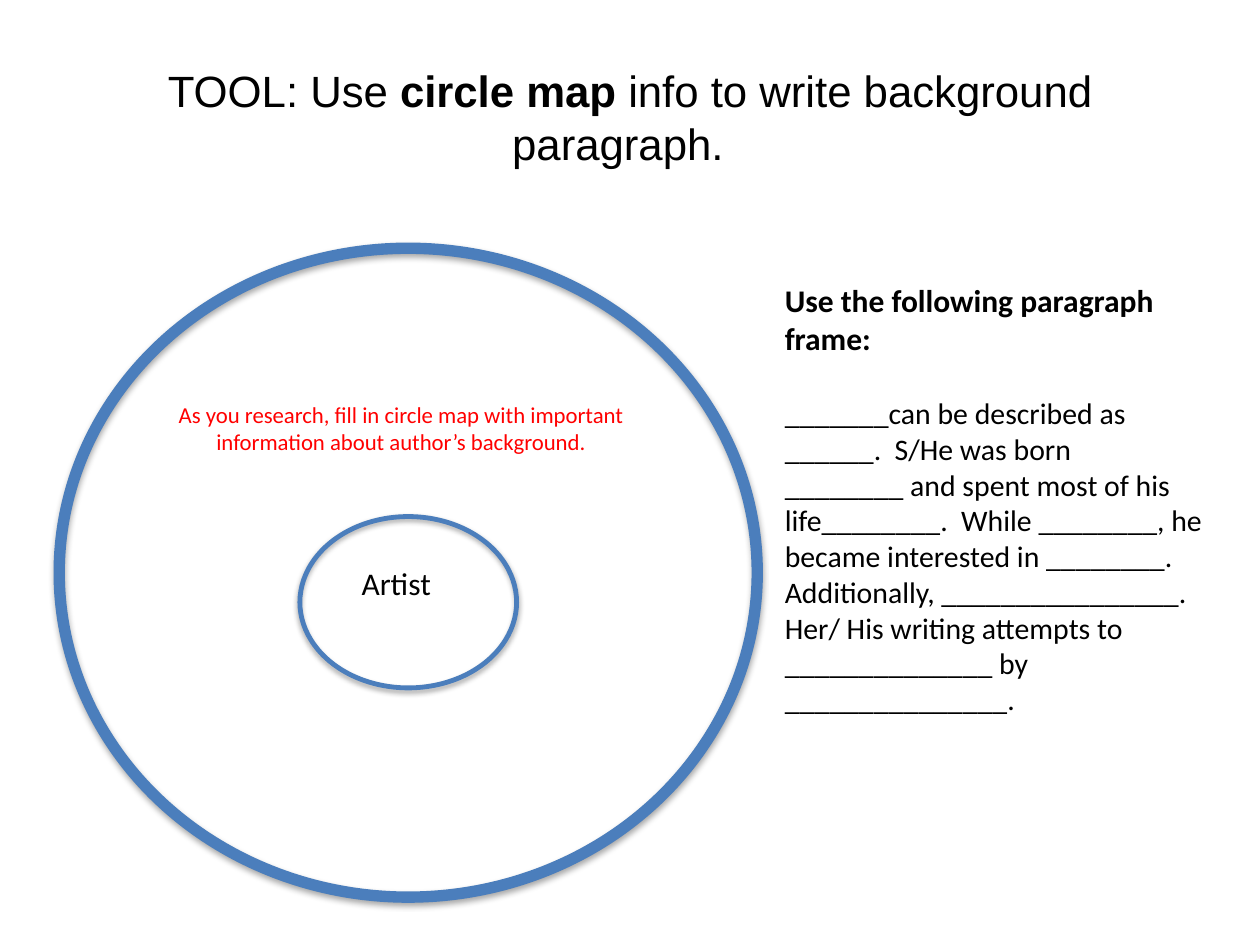
from pptx import Presentation
from pptx.dml.color import RGBColor
from pptx.enum import shapes, text
from pptx.util import Inches, Pt

BLACK, RED, BLUE = "000000", "FF0000", "4B7EBC"
CENTER, LEFT = text.PP_ALIGN.CENTER, text.PP_ALIGN.LEFT
FRAME_HEADING = "Use the following paragraph frame:"
FRAME_LINES = [
    "_______can be described as ______.  S/He was born",
    "________ and spent most of his life________.  While ________, he became interested in ________.",
    "Additionally, ________________.  Her/ His writing attempts to ______________ by _______________.",
]


def rgb(value):
    """Return the colour for a hex string."""
    return RGBColor.from_string(value)


def add_frame(slide, box, anchor=text.MSO_ANCHOR.TOP):
    """Add a wrapping text box and return its text frame."""
    tf = slide.shapes.add_textbox(*map(Inches, box)).text_frame
    tf.word_wrap = True
    tf.vertical_anchor = anchor
    return tf


def style(p, size, font="Calibri", color=BLACK, bold=False, align=LEFT):
    """Set the alignment and font of a paragraph."""
    p.alignment = align
    p.font.size = Pt(size)
    p.font.name = font
    p.font.bold = bold
    p.font.color.rgb = rgb(color)


def add_title(slide, box):
    """Write the title with its key term in bold."""
    p = add_frame(slide, box, text.MSO_ANCHOR.MIDDLE).paragraphs[0]
    style(p, 25, font="Arial", align=CENTER)
    for part in ("TOOL: Use ", "circle map", " info to write background paragraph.  "):
        r = p.add_run()
        r.text = part
        if part == "circle map":
            r.font.bold = True


def add_ring(slide, box, weight):
    """Draw an unfilled ellipse that keeps the theme shadow."""
    sp = slide.shapes.add_shape(shapes.MSO_SHAPE.OVAL, *map(Inches, box))
    sp.fill.background()
    sp.line.color.rgb = rgb(BLUE)
    sp.line.width = Pt(weight)


def add_label(slide, box, wording, size, color=BLACK):
    """Write one centred label."""
    p = add_frame(slide, box).paragraphs[0]
    p.text = wording
    style(p, size, color=color, align=CENTER)


def add_circle_map(slide, box):
    """Draw the circle map with its topic and instruction."""
    left, top, width, height = box
    add_ring(slide, box, 6.5)
    add_ring(slide, (left + 1.91, top + 2.13, 1.72, 1.36), 2.75)
    add_label(slide, (left + 1.91, top + 2.46, 1.53, 0.4), "Artist", 18)
    add_label(slide, (left + 0.47, top + 1.16, width - 1.06, 0.54),
              "As you research, fill in circle map with important "
              "information about author’s background.", 13, RED)


def add_paragraph_frame(slide, box):
    """Write the heading and the fill-in paragraph."""
    tf = add_frame(slide, box)
    heading = tf.paragraphs[0]
    heading.text = FRAME_HEADING
    style(heading, 18, bold=True)
    heading.space_after = Pt(22)
    for line in FRAME_LINES:
        p = tf.add_paragraph()
        p.text = line
        style(p, 17)


def main():
    """Build and save the slide."""
    prs = Presentation()
    prs.slide_width, prs.slide_height = Inches(10), Inches(7.5)
    s = prs.slides.add_slide(prs.slide_layouts[6])
    add_title(s, (0.5, 0.3, 9, 1.25))
    add_circle_map(s, (0.47, 1.97, 5.54, 5.15))
    add_paragraph_frame(s, (6.13, 2.18, 3.61, 3.58))
    prs.save("out.pptx")


if __name__ == "__main__":
    main()
